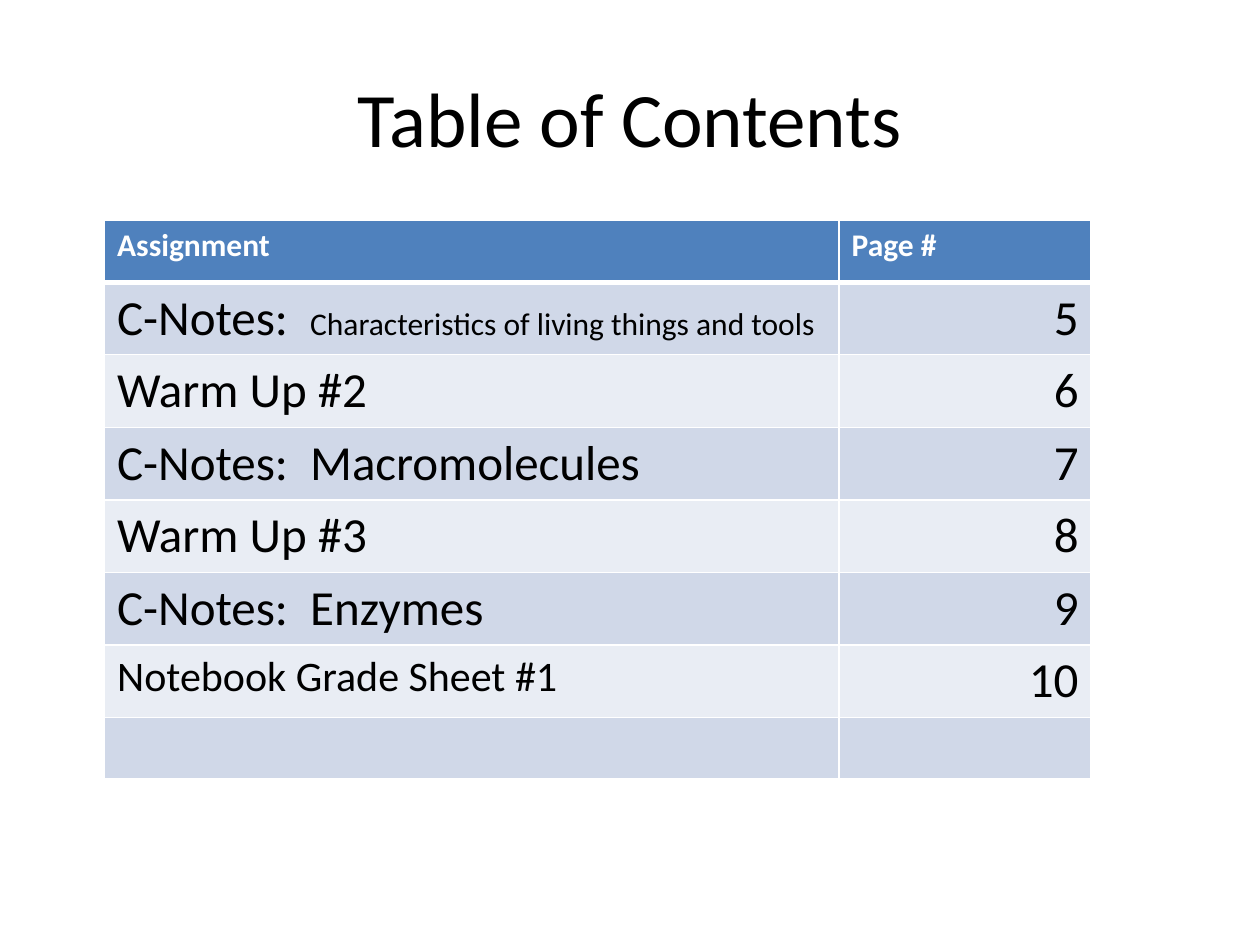
from dataclasses import dataclass

from lxml.etree import SubElement
from pptx import Presentation
from pptx.dml.color import RGBColor as Rgb
from pptx.enum.text import MSO_ANCHOR as Anchor, PP_ALIGN as Align
from pptx.oxml.ns import qn
from pptx.util import Inches, Pt


@dataclass(frozen=True)
class Theme:
    font: str = "Calibri"
    ink: str = "000000"
    paper: str = "FFFFFF"
    header: str = "4F81BD"
    bands: tuple = ("D0D8E8", "E9EDF4")
    title: int = 44
    entry: int = 28
    compact: int = 24
    small: int = 18


theme = Theme()


def write(paragraph, text, size=theme.entry, color=theme.ink, bold=False, align=Align.LEFT):
    paragraph.alignment = align
    run = paragraph.add_run()
    run.text = text
    run.font.name = theme.font
    run.font.size = Pt(size)
    run.font.bold = bold
    run.font.color.rgb = Rgb.from_string(color)


def paint(cell, fill, top=1, bottom=1):
    """Give a cell its white borders (in points) and its fill."""
    properties = cell._tc.get_or_add_tcPr()
    for side, width in (("L", 1), ("R", 1), ("T", top), ("B", bottom)):
        line = SubElement(properties, qn(f"a:ln{side}"), w=str(Pt(width)))
        SubElement(SubElement(line, qn("a:solidFill")), qn("a:srgbClr"), val=theme.paper)
    cell.fill.solid()
    cell.fill.fore_color.rgb = Rgb.from_string(fill)


# Each entry: runs of (text, size), then its page
entries = [
    ([("C-Notes:  ", theme.entry),
      ("Characteristics of living things and tools", theme.small)], "5"),
    ([("Warm Up #2", theme.entry)], "6"),
    ([("C-Notes:  Macromolecules", theme.entry)], "7"),
    ([("Warm Up #3", theme.entry)], "8"),
    ([("C-Notes:  Enzymes", theme.entry)], "9"),
    ([("Notebook Grade Sheet #1", theme.compact)], "10"),
    ([], ""),
]

# Slide
deck = Presentation()
deck.slide_width, deck.slide_height = Inches(10), Inches(7.5)
slide = deck.slides.add_slide(deck.slide_layouts[5])

# Title, centred across the slide
heading = slide.shapes.title
heading.left, heading.width = int(deck.slide_width * 0.05), int(deck.slide_width * 0.9)
heading.top, heading.height = int(deck.slide_height * 0.04), Inches(1.25)
heading.text_frame.vertical_anchor = Anchor.MIDDLE
write(heading.text_frame.paragraphs[0], "Table of Contents", size=theme.title, align=Align.CENTER)

# Contents table: a wide assignment column and a narrow page column
column_widths = (Inches(5.83), Inches(2))
row_height = Inches(0.49)
row_count = len(entries) + 1
contents = slide.shapes.add_table(
    row_count, len(column_widths), Inches(0.83), Inches(1.75),
    sum(column_widths), row_height * row_count).table
for column, width in zip(contents.columns, column_widths):
    column.width = width
for row in contents.rows:
    row.height = row_height

# Header row, with a heavier rule below
for cell, label in zip(contents.rows[0].cells, ("Assignment", "Page #")):
    paint(cell, theme.header, bottom=3)
    write(cell.text_frame.paragraphs[0], label, size=theme.small, color=theme.paper, bold=True)

# Banded entry rows
for index, (assignment, page) in enumerate(entries):
    cells = contents.rows[index + 1].cells
    for cell in cells:
        paint(cell, theme.bands[index % 2], top=3 if index == 0 else 1)
    for text, size in assignment:
        write(cells[0].text_frame.paragraphs[0], text, size=size)
    if page:
        write(cells[1].text_frame.paragraphs[0], page, align=Align.RIGHT)

deck.save("out.pptx")
